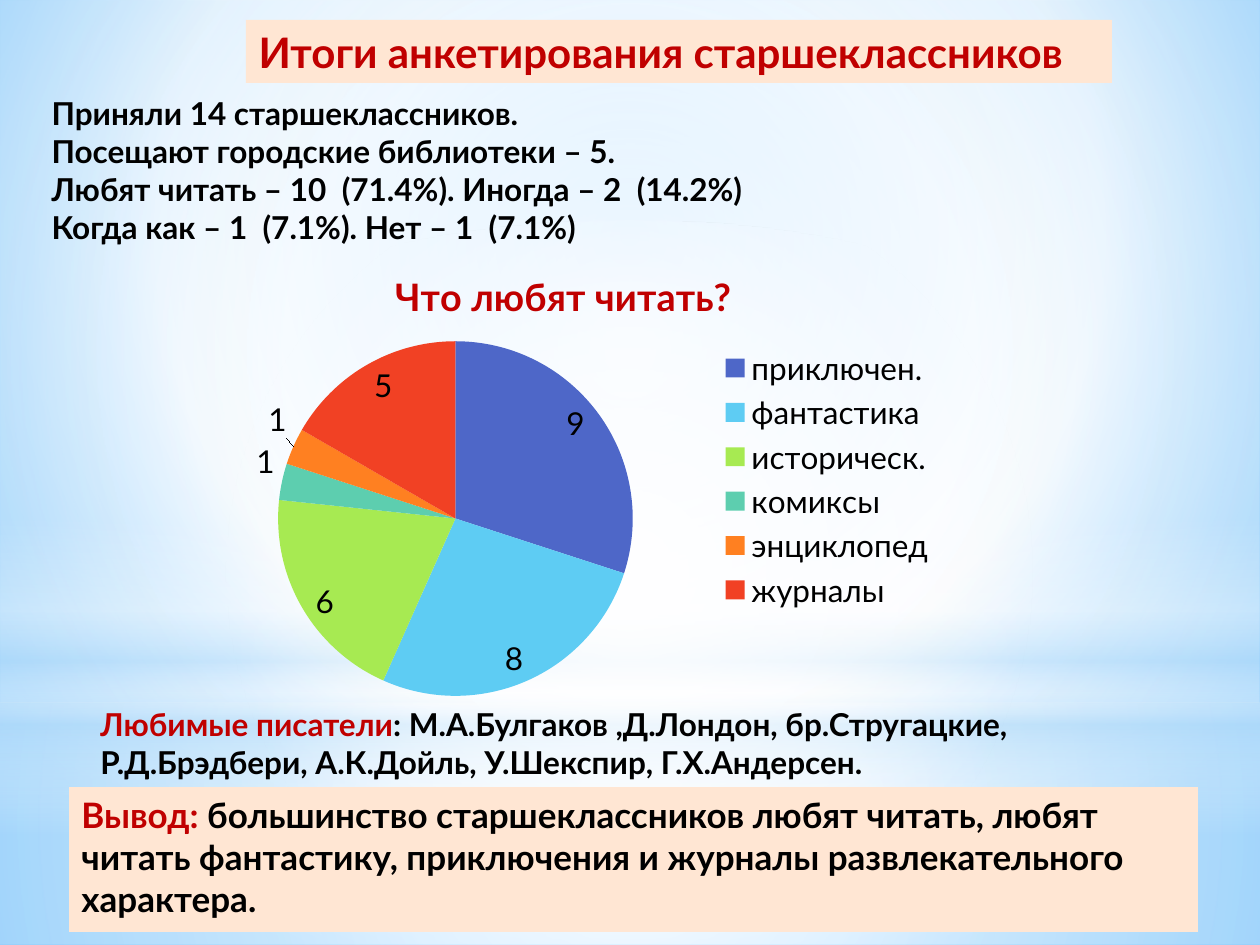
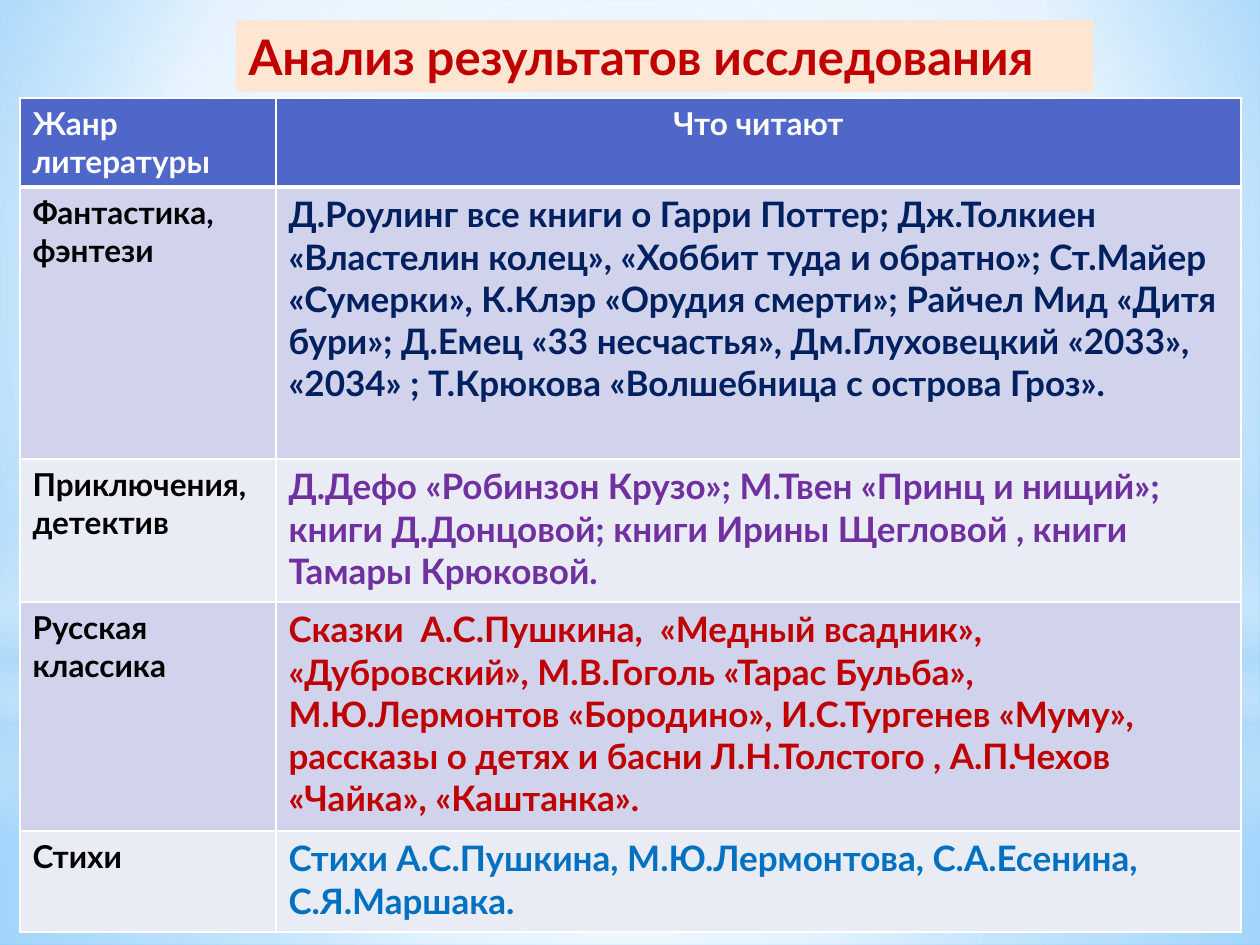
"""Build two slides on what senior pupils read: survey results and a table of books by genre."""
from dataclasses import dataclass

from lxml.etree import SubElement
from pptx import Presentation
from pptx.chart.data import CategoryChartData
from pptx.dml.color import RGBColor as Rgb
from pptx.enum.chart import XL_CHART_TYPE as ChartType
from pptx.enum.chart import XL_LABEL_POSITION as LabelPosition
from pptx.enum.chart import XL_LEGEND_POSITION as LegendPosition
from pptx.enum.shapes import MSO_SHAPE as Preset
from pptx.enum.text import MSO_ANCHOR as Anchor
from pptx.enum.text import MSO_AUTO_SIZE as AutoSize
from pptx.enum.text import PP_ALIGN as Align
from pptx.oxml import parse_xml
from pptx.oxml.ns import nsdecls, qn
from pptx.util import Pt


@dataclass(frozen=True)
class Theme:
    font: str = "Lato"
    red: str = "C00000"
    black: str = "000000"
    white: str = "FFFFFF"
    peach: str = "FFE6D3"
    sky: str = "B4DCFA"
    header: str = "4E67C8"
    bands: tuple = ("D0D3EB", "E9EBF5")
    slices: tuple = ("4E67C8", "5ECCF3", "A7EA52", "5DCEAF", "FF8021", "F14124")
    navy: str = "002060"
    purple: str = "7030A0"
    blue: str = "0070C0"
    small: int = 18
    medium: int = 20
    chart_title: float = 21.6
    survey_title: int = 24
    analysis_title: int = 28


theme = Theme()
PX = 914400 / 126


def emu(*lengths):
    return [round(length * PX) for length in lengths]


def set_gradient(fill, owner, stops, focus=None):
    fill.gradient()
    gradient = owner.xpath(".//a:gradFill")[0]
    stop_xml = "".join(
        f'<a:gs pos="{position * 1000}"><a:srgbClr val="{color}">'
        f'<a:alpha val="{opacity * 1000}"/></a:srgbClr></a:gs>'
        for position, color, opacity in stops)
    if focus:
        sides = " ".join(f'{side}="{share * 1000}"' for side, share in zip("ltrb", focus))
        direction = f'<a:path path="circle"><a:fillToRect {sides}/></a:path>'
    else:
        direction = '<a:lin ang="5400000" scaled="0"/>'
    gradient.getparent().replace(gradient, parse_xml(
        f'<a:gradFill rotWithShape="1" {nsdecls("a")}>'
        f'<a:gsLst>{stop_xml}</a:gsLst>{direction}</a:gradFill>'))


deck = Presentation()
deck.slide_width, deck.slide_height = emu(1260, 945)
survey = deck.slides.add_slide(deck.slide_layouts[1])
analysis = deck.slides.add_slide(deck.slide_layouts[5])

master = deck.slide_master
set_gradient(master.background.fill, master.element.cSld,
             [(0, "9ED5FF", 100), (60, theme.white, 100), (100, "5BB9FF", 100)],
             (20, 10, 20, 60))
center = (50, 50, 50, 50)
glows = [
    (Preset.RECTANGLE, (0, 703, 1260, 242), center,
     [(0, theme.white, 91), (37, theme.white, 76), (100, theme.sky, 79)]),
    (Preset.RECTANGLE, (0, 0, 1260, 703), center,
     [(0, theme.white, 89), (48, theme.white, 62), (100, theme.sky, 79)]),
    (Preset.RECTANGLE, (0, 519, 1260, 315), None,
     [(0, theme.white, 0), (29, theme.white, 30), (45, theme.sky, 40),
      (55, theme.white, 26), (65, theme.sky, 60), (100, theme.white, 0)]),
    (Preset.OVAL, (0, 221, 1260, 703), center,
     [(0, theme.white, 100), (56, theme.white, 0)]),
]
for depth, (preset, area, focus, stops) in enumerate(glows):
    glow = survey.shapes.add_shape(preset, *emu(*area))
    glow.shadow.inherit = False
    glow.line.fill.background()
    set_gradient(glow.fill, glow.element, stops, focus)
    master.element.cSld.spTree.insert(2 + depth, glow.element)

favorites = ["приключен.", "фантастика", "историческ.", "комиксы", "энциклопед", "журналы"]
votes = CategoryChartData()
votes.categories = favorites
votes.add_series("Series 1", (9, 8, 6, 1, 1, 5))
pie = survey.shapes.add_chart(ChartType.PIE, *emu(178, 246, 771, 466), votes).chart
pie.font.name = theme.font
pie.font.size = Pt(theme.small)
pie.font.color.rgb = Rgb.from_string(theme.black)
pie.has_title = True
pie.chart_title.include_in_layout = False
question = pie.chart_title.text_frame.paragraphs[0].add_run()
question.text = "Что любят читать?"
question.font.name = theme.font
question.font.size = Pt(theme.chart_title)
question.font.bold = True
question.font.color.rgb = Rgb.from_string(theme.red)
pie.has_legend = True
pie.legend.position = LegendPosition.RIGHT
pie.legend.include_in_layout = False
plot = pie.plots[0]
plot.vary_by_categories = True
plot.has_data_labels = True
plot.data_labels.show_value = True
plot.data_labels.show_percentage = False
plot.data_labels.position = LabelPosition.BEST_FIT
for index, color in enumerate(theme.slices):
    slice_fill = plot.series[0].points[index].format.fill
    slice_fill.solid()
    slice_fill.fore_color.rgb = Rgb.from_string(color)
plot_area = pie.element.xpath(".//c:plotArea")[0]
for old_layout in plot_area.findall(qn("c:layout")):
    plot_area.remove(old_layout)
plot_area.insert(0, parse_xml(
    f'<c:layout {nsdecls("c")}><c:manualLayout><c:layoutTarget val="inner"/>'
    '<c:xMode val="edge"/><c:yMode val="edge"/><c:x val="0.13"/><c:y val="0.2"/>'
    '<c:w val="0.46"/><c:h val="0.77"/></c:manualLayout></c:layout>'))

writers = survey.shapes.add_textbox(0, 0, 0, 0)
conclusion = survey.shapes.add_textbox(0, 0, 0, 0)
facts = ["Приняли 14 старшеклассников.",
         "Посещают городские библиотеки – 5.",
         "Любят читать – 10  (71.4%). Иногда – 2  (14.2%)",
         "Когда как – 1  (7.1%). Нет – 1  (7.1%)"]
texts = [
    (survey.shapes.title, (246, 20, 866, 63), theme.survey_title, theme.peach,
     [[("Итоги анкетирования старшеклассников", theme.red)]]),
    (survey.placeholders[1], (39, 88, 1160, 165), theme.small, None,
     [[(fact, theme.black)] for fact in facts]),
    (writers, (88, 699, 995, 89), theme.small, None,
     [[("Любимые писатели", theme.red),
       (": М.А.Булгаков ,Д.Лондон, бр.Стругацкие,", theme.black)],
      [("Р.Д.Брэдбери, А.К.Дойль, У.Шекспир, Г.Х.Андерсен.", theme.black)]]),
    (conclusion, (69, 787, 1129, 145), theme.medium, theme.peach,
     [[("Вывод: ", theme.red),
       ("большинство старшеклассников любят читать, любят читать фантастику, "
        "приключения и журналы развлекательного характера.", theme.black)]]),
    (analysis.shapes.title, (236, 20, 857, 72), theme.analysis_title, theme.peach,
     [[("Анализ результатов исследования", theme.red)]]),
]
for holder, area, size, backdrop, lines in texts:
    holder.left, holder.top, holder.width, holder.height = emu(*area)
    if backdrop:
        holder.fill.solid()
        holder.fill.fore_color.rgb = Rgb.from_string(backdrop)
    frame = holder.text_frame
    frame.word_wrap = True
    frame.auto_size = AutoSize.NONE
    frame.vertical_anchor = Anchor.TOP
    for number, line in enumerate(lines):
        paragraph = frame.add_paragraph() if number else frame.paragraphs[0]
        paragraph.alignment = Align.LEFT
        paragraph.space_before = Pt(0)
        paragraph.font.name = theme.font
        paragraph.font.size = Pt(size)
        paragraph.font.bold = True
        for words, color in line:
            run = paragraph.add_run()
            run.text = words
            run.font.color.rgb = Rgb.from_string(color)
for paragraph in survey.placeholders[1].text_frame.paragraphs:
    properties = paragraph._p.get_or_add_pPr()
    properties.set("marL", "0")
    properties.set("indent", "0")
    properties.insert_element_before(
        parse_xml(f'<a:buNone {nsdecls("a")}/>'), "a:tabLst", "a:defRPr", "a:extLst")

genres = [
    ("Жанр литературы", "Что читают", theme.white, 89),
    ("Фантастика, фэнтези",
     "Д.Роулинг все книги о Гарри Поттер; Дж.Толкиен «Властелин колец», «Хоббит туда и "
     "обратно»; Ст.Майер «Сумерки», К.Клэр «Орудия смерти»; Райчел Мид «Дитя бури»; "
     "Д.Емец «33 несчастья», Дм.Глуховецкий «2033», «2034» ; Т.Крюкова «Волшебница с "
     "острова Гроз».", theme.navy, 272),
    ("Приключения, детектив",
     "Д.Дефо «Робинзон Крузо»; М.Твен «Принц и нищий»; книги Д.Донцовой; книги Ирины "
     "Щегловой , книги Тамары Крюковой.", theme.purple, 143),
    ("Русская классика",
     "Сказки  А.С.Пушкина,  «Медный всадник», «Дубровский», М.В.Гоголь «Тарас Бульба», "
     "М.Ю.Лермонтов «Бородино», И.С.Тургенев «Муму», рассказы о детях и басни "
     "Л.Н.Толстого , А.П.Чехов «Чайка», «Каштанка».", theme.red, 229),
    ("Стихи", "Стихи А.С.Пушкина, М.Ю.Лермонтова, С.А.Есенина, С.Я.Маршака.",
     theme.blue, 101),
]
heights = [genre[-1] for genre in genres]
books = analysis.shapes.add_table(
    len(genres), 2, *emu(20, 98, 1221, sum(heights))).table
for column, width in zip(books.columns, emu(256, 965)):
    column.width = width
for row, (genre, titles, color, height) in enumerate(genres):
    books.rows[row].height = emu(height)[0]
    for column, words in enumerate((genre, titles)):
        is_header = row == 0
        cell = books.cell(row, column)
        cell.text = words
        paragraph = cell.text_frame.paragraphs[0]
        paragraph.alignment = Align.CENTER if is_header and column else Align.LEFT
        paragraph.font.name = theme.font
        paragraph.font.size = Pt(theme.medium if column and not is_header else theme.small)
        paragraph.font.bold = True
        paragraph.runs[0].font.color.rgb = Rgb.from_string(
            color if is_header or column else theme.black)
        borders = cell._tc.get_or_add_tcPr()
        for side in "LRTB":
            thick = (is_header and side == "B") or (row == 1 and side == "T")
            border = SubElement(borders, qn(f"a:ln{side}"), w=str(Pt(3 if thick else 1)))
            stroke = SubElement(border, qn("a:solidFill"))
            SubElement(stroke, qn("a:srgbClr"), val=theme.white)
        cell.fill.solid()
        cell.fill.fore_color.rgb = Rgb.from_string(
            theme.header if is_header else theme.bands[(row - 1) % 2])

deck.save("out.pptx")
